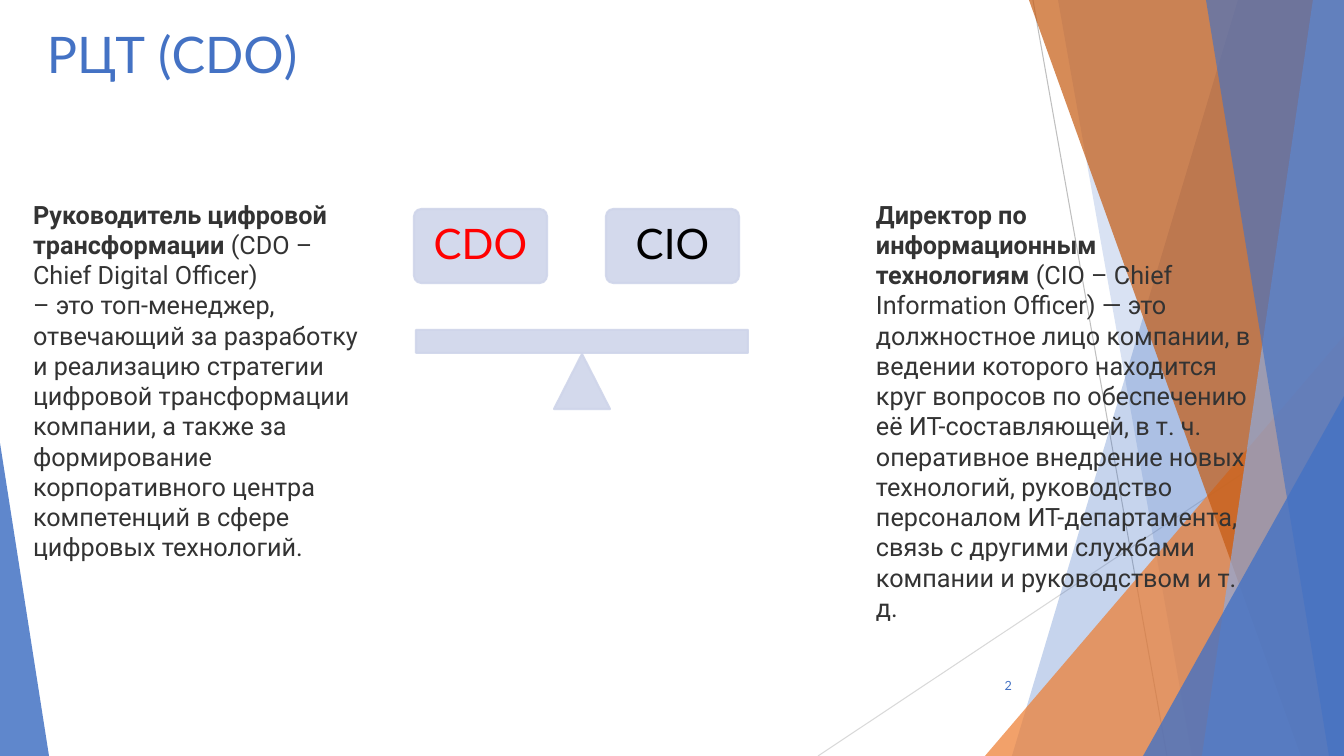
from dataclasses import dataclass
from lxml.etree import SubElement
from pptx import Presentation
from pptx.dml.color import RGBColor
from pptx.enum.shapes import MSO_CONNECTOR as Line, MSO_SHAPE as Shape
from pptx.enum.text import MSO_ANCHOR as Anchor, MSO_AUTO_SIZE as Fit, PP_ALIGN as Align
from pptx.oxml.ns import qn
from pptx.util import Emu, Pt


@dataclass(frozen=True)
class Theme:
    blue: str = "4472C4"
    sky: str = "8FAADC"
    orange: str = "ED7D31"
    rust: str = "C55A11"
    scales: str = "CFD5EA"
    ink: str = "333333"
    red: str = "FF0000"
    black: str = "000000"
    heading_font: str = "Lato"
    body_font: str = "Roboto"
    title_size: int = 36
    weight_size: int = 30
    body_size: int = 18
    number_size: int = 9


THEME = Theme()
WIDTH, HEIGHT = 1344, 756
PX = 914400 / 100.8

TITLE = "РЦТ (CDO)"
PAGE_NUMBER = "2"
CDO_ROLE = [
    [("Руководитель цифровой трансформации ", True), ("(CDO – Chief Digital Officer)", False)],
    [("– это топ-менеджер, отвечающий за разработку и реализацию стратегии цифровой "
      "трансформации компании, а также за формирование корпоративного центра "
      "компетенций в сфере цифровых технологий.", False)],
]
CIO_ROLE = [
    [("Директор по информационным технологиям", True),
     (" (CIO – Chief Information Officer) — это должностное лицо компании, "
      "в ведении которого находится круг вопросов по обеспечению её ИТ-составляющей, "
      "в т. ч. оперативное внедрение новых технологий, руководство персоналом "
      "ИТ-департамента, связь с другими службами компании и руководством и т. д.", False)],
]
ROLES = [(CDO_ROLE, (23, 194, 350, 377)), (CIO_ROLE, (866, 194, 396, 437))]
WEIGHTS = [("CDO", THEME.red), ("CIO", THEME.black)]
RAYS = [((1033, 0), (1167, 756), "BFBFBF"), ((1344, 406), (818, 756), "D9D9D9")]
FACETS = [
    ("band", (1238, 1012), THEME.blue, 30),
    ("band", (1058, 1192), THEME.blue, 20),
    ("right wedge", (359, 420), THEME.orange, 72),
    ("band", (1029, 1301), THEME.rust, 70),
    ("band", (1313, 1202), THEME.sky, 70),
    ("band", (1206, 1329), THEME.blue, 65),
    ("right wedge", (201, 360), THEME.blue, 80),
    ("left wedge", (49, 313), THEME.blue, 85),
]


def px(*lengths):
    return [Emu(round(length * PX)) for length in lengths]


def paint(shape, color, opacity, outlined=False):
    shape.shadow.inherit = False
    shape.fill.solid()
    shape.fill.fore_color.rgb = RGBColor.from_string(color)
    if outlined:
        shape.line.width = Pt(1.5)
        shape.line.color.rgb = RGBColor.from_string(color)
    else:
        shape.line.fill.background()
    for tint in shape._element.spPr.iter(qn("a:srgbClr")):
        SubElement(tint, qn("a:alpha"), val=str(opacity * 1000))


def write(shape, paragraphs, *, size, color, font=THEME.heading_font,
          align=Align.LEFT, anchor=Anchor.TOP, spacing=None, inset=(10, 5)):
    frame = shape.text_frame
    frame.word_wrap = True
    frame.auto_size = Fit.NONE
    frame.vertical_anchor = anchor
    frame.margin_left = frame.margin_right = px(inset[0])[0]
    frame.margin_top = frame.margin_bottom = px(inset[1])[0]
    for index, pieces in enumerate(paragraphs):
        paragraph = frame.add_paragraph() if index else frame.paragraphs[0]
        paragraph.alignment = align
        if spacing:
            paragraph.line_spacing = spacing
        for text, bold in pieces:
            run = paragraph.add_run()
            run.text = text
            run.font.name = font
            run.font.size = Pt(size)
            run.font.bold = bold
            run.font.color.rgb = RGBColor.from_string(color)


def draw_ray(shapes, start, end, color):
    ray = shapes.add_connector(Line.STRAIGHT, *px(*start, *end))
    ray.line.width = Pt(0.75)
    ray.line.color.rgb = RGBColor.from_string(color)
    SubElement(ray._element.spPr, qn("a:effectLst"))


def draw_facet(shapes, kind, extent, color, opacity):
    if kind == "band":
        top, bottom = extent
        outline = shapes.build_freeform(top, 0, scale=PX)
        outline.add_line_segments([(WIDTH, 0), (WIDTH, HEIGHT), (bottom, HEIGHT)], close=True)
        facet = outline.convert_to_shape()
    else:
        width, height = extent
        on_right = kind == "right wedge"
        left = WIDTH - width if on_right else 0
        facet = shapes.add_shape(Shape.ISOSCELES_TRIANGLE, *px(left, HEIGHT - height, width, height))
        facet.adjustments[0] = 1 if on_right else 0
    paint(facet, color, opacity)


def draw_scales(shapes):
    for index, (label, color) in enumerate(WEIGHTS):
        weight = shapes.add_shape(Shape.ROUNDED_RECTANGLE, *px(414 + index * 192, 209, 133, 74))
        weight.adjustments[0] = 0.1
        paint(weight, THEME.scales, 90, outlined=True)
        write(weight, [[(label, False)]], size=THEME.weight_size, color=color,
              align=Align.CENTER, anchor=Anchor.MIDDLE, spacing=0.9, inset=(12, 12))
    for form, box in [(Shape.ISOSCELES_TRIANGLE, (554, 354, 56, 55)),
                      (Shape.RECTANGLE, (416, 330, 332, 23))]:
        paint(shapes.add_shape(form, *px(*box)), THEME.scales, 90, outlined=True)


def main():
    deck = Presentation()
    deck.slide_width, deck.slide_height = px(WIDTH, HEIGHT)
    shapes = deck.slides.add_slide(deck.slide_layouts[5]).shapes
    for ray in RAYS:
        draw_ray(shapes, *ray)
    for facet in FACETS:
        draw_facet(shapes, *facet)
    draw_scales(shapes)
    for role, box in ROLES:
        write(shapes.add_textbox(*px(*box)), role, size=THEME.body_size,
              color=THEME.ink, font=THEME.body_font)
    write(shapes.add_textbox(*px(947, 666, 75, 40)), [[(PAGE_NUMBER, False)]],
          size=THEME.number_size, color=THEME.blue, align=Align.RIGHT, anchor=Anchor.MIDDLE)
    title = shapes.title
    title.left, title.top, title.width, title.height = px(37, 18, 948, 80)
    write(title, [[(TITLE, False)]], size=THEME.title_size, color=THEME.blue)
    deck.save("out.pptx")


if __name__ == "__main__":
    main()
